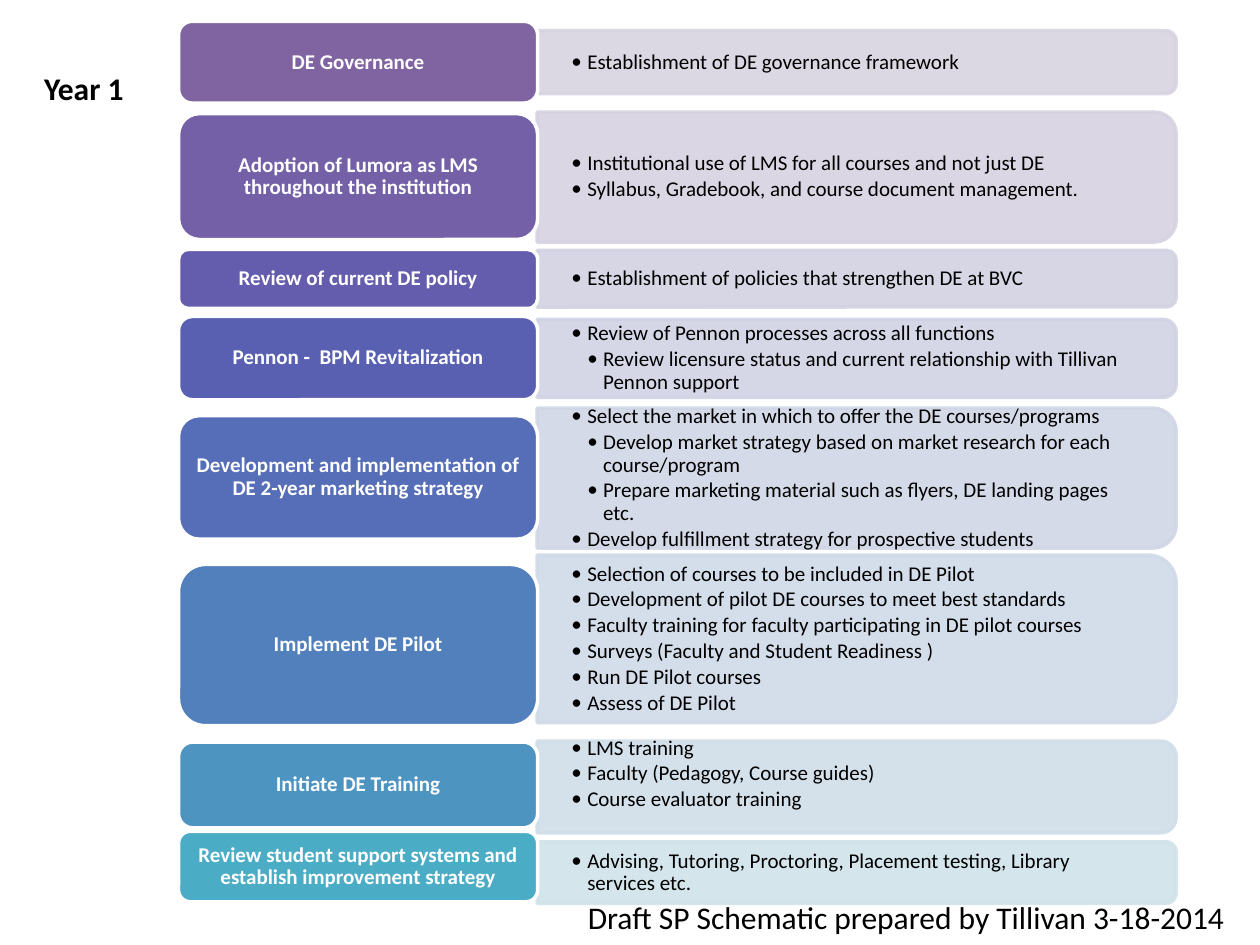
from collections import namedtuple

from lxml import etree
from pptx import Presentation
from pptx.dml.color import RGBColor
from pptx.enum.shapes import MSO_SHAPE as Shape
from pptx.enum.text import MSO_ANCHOR as Anchor, MSO_AUTO_SIZE as AutoSize, PP_ALIGN as Align
from pptx.oxml.ns import qn
from pptx.util import Cm, Pt

FONT = "Calibri"
LABEL_LEFT, LABEL_WIDTH = 3.6, 7.24
PANEL_LEFT, PANEL_WIDTH = 10.83, 12.88
INDENT = 0.32

# Spans are (top, height) in cm; each bullet is (level, text)
Row = namedtuple("Row", "title label_span label_color panel_span panel_color bullets lift",
                 defaults=[0])

ROWS = [
    Row("DE Governance", (0.43, 1.65), "8064A2", (0.62, 1.27), "D8D3E0",
        [(1, "Establishment of DE governance framework")]),
    Row("Adoption of Lumora as LMS throughout the institution",
        (2.29, 2.54), "7460A7", (2.26, 2.62), "D6D2E1",
        [(1, "Institutional use of LMS for all courses and not just DE"),
         (1, "Syllabus, Gradebook, and course document management.")]),
    Row("Review of current DE policy", (5.03, 1.19), "645DAD", (5.05, 1.14), "D3D2E3",
        [(1, "Establishment of policies that strengthen DE at BVC")]),
    Row("Pennon -  BPM Revitalization", (6.38, 1.68), "5960B2", (6.44, 1.57), "D1D3E5",
        [(1, "Review of Pennon processes across all functions"),
         (2, "Review licensure status and current relationship with Tillivan Pennon support")]),
    Row("Development and implementation of DE 2-year marketing strategy",
        (8.38, 2.49), "556EB7", (8.23, 2.82), "D1D6E6",
        [(1, "Select the market in which to offer the DE courses/programs"),
         (2, "Develop market strategy based on market research for each course/program"),
         (2, "Prepare marketing material such as flyers, DE landing pages etc."),
         (1, "Develop fulfillment strategy for prospective students")]),
    Row("Implement DE Pilot", (11.38, 3.25), "5280BC", (11.19, 3.38), "D0DAE8",
        [(1, "Selection of courses to be included in DE Pilot"),
         (1, "Development of pilot DE courses to meet best standards"),
         (1, "Faculty training for faculty participating in DE pilot courses"),
         (1, "Surveys (Faculty and Student Readiness )"),
         (1, "Run DE Pilot courses"),
         (1, "Assess of DE Pilot")]),
    Row("Initiate DE Training", (14.96, 1.73), "4E94C1", (14.94, 1.85), "D0DEE9",
        [(1, "LMS training"),
         (1, "Faculty (Pedagogy, Course guides)"),
         (1, "Course evaluator training")], 0.26),
    Row("Review student support systems and establish improvement strategy",
        (16.76, 1.42), "4BACC6", (16.97, 1.24), "D0E3EA",
        [(1, "Advising, Tutoring, Proctoring, Placement testing, Library services etc.")]),
]


def color(hex_value):
    return RGBColor.from_string(hex_value)


def set_font(para, size, hex_value, bold=False):
    para.font.name = FONT
    para.font.size = Pt(size)
    para.font.bold = bold
    para.font.color.rgb = color(hex_value)


def set_insets(frame, side, vertical):
    frame.margin_left = frame.margin_right = Cm(side)
    frame.margin_top = frame.margin_bottom = Cm(vertical)


def add_block(page, kind, box, fill, line):
    block = page.shapes.add_shape(kind, *map(Cm, box))
    block.shadow.inherit = False
    block.fill.solid()
    block.fill.fore_color.rgb = color(fill)
    block.line.color.rgb = color(line)
    block.line.width = Pt(2)
    return block


def add_bullet(para, level):
    properties = para._p.get_or_add_pPr()
    properties.set("marL", str(Cm(INDENT * level)))
    properties.set("indent", str(-Cm(INDENT)))
    etree.SubElement(properties, qn("a:buFont")).set("typeface", FONT)
    etree.SubElement(properties, qn("a:buChar")).set("char", "•")


def add_panel(page, box, fill, bullets, lift):
    """Tinted panel rounded on the right, with its bullet list."""
    left, top, width, height = box
    # The shape rounds its top corners, so it is turned a quarter about its centre
    turned = (left + (width - height) / 2, top + (height - width) / 2, height, width)
    panel = add_block(page, Shape.ROUND_2_SAME_RECTANGLE, turned, fill, fill)
    panel.rotation = 90
    for tint in panel._element.spPr.iter(qn("a:srgbClr")):
        etree.SubElement(tint, qn("a:alpha")).set("val", "90000")

    text_box = page.shapes.add_textbox(Cm(left), Cm(top - lift), Cm(width - 0.1), Cm(height))
    frame = text_box.text_frame
    frame.word_wrap = True
    frame.vertical_anchor = Anchor.MIDDLE
    set_insets(frame, 0.69, 0)
    for index, (level, text) in enumerate(bullets):
        para = frame.add_paragraph() if index else frame.paragraphs[0]
        para.text = text
        para.line_spacing = 0.9
        para.space_after = Pt(1.8)
        set_font(para, 12, "000000")
        add_bullet(para, level)


def add_label(page, box, fill, title):
    """Rounded heading block on the left."""
    frame = add_block(page, Shape.ROUNDED_RECTANGLE, box, fill, "FFFFFF").text_frame
    frame.word_wrap = True
    frame.vertical_anchor = Anchor.MIDDLE
    set_insets(frame, 0.2, 0.08)
    para = frame.paragraphs[0]
    para.text = title
    para.alignment = Align.CENTER
    para.line_spacing = 0.9
    set_font(para, 12, "FFFFFF", bold=True)


def add_caption(page, box, text, bold=False):
    frame = page.shapes.add_textbox(*map(Cm, box)).text_frame
    frame.word_wrap = False
    frame.auto_size = AutoSize.SHAPE_TO_FIT_TEXT
    para = frame.paragraphs[0]
    para.text = text
    set_font(para, 18, "000000", bold)


def main():
    deck = Presentation()
    deck.slide_width, deck.slide_height = Cm(25.4), Cm(19.05)
    page = deck.slides.add_slide(deck.slide_layouts[6])

    # Schematic rows
    for row in ROWS:
        panel_top, panel_height = row.panel_span
        label_top, label_height = row.label_span
        add_panel(page, (PANEL_LEFT, panel_top, PANEL_WIDTH, panel_height),
                  row.panel_color, row.bullets, row.lift)
        add_label(page, (LABEL_LEFT, label_top, LABEL_WIDTH, label_height),
                  row.label_color, row.title)

    # Year heading and credit line
    add_caption(page, (0.64, 1.27, 2.13, 1.03), "Year 1", bold=True)
    add_caption(page, (11.6, 17.98, 13.69, 1.03),
                "Draft SP Schematic prepared by Tillivan 3-18-2014")

    deck.save("out.pptx")


if __name__ == "__main__":
    main()
